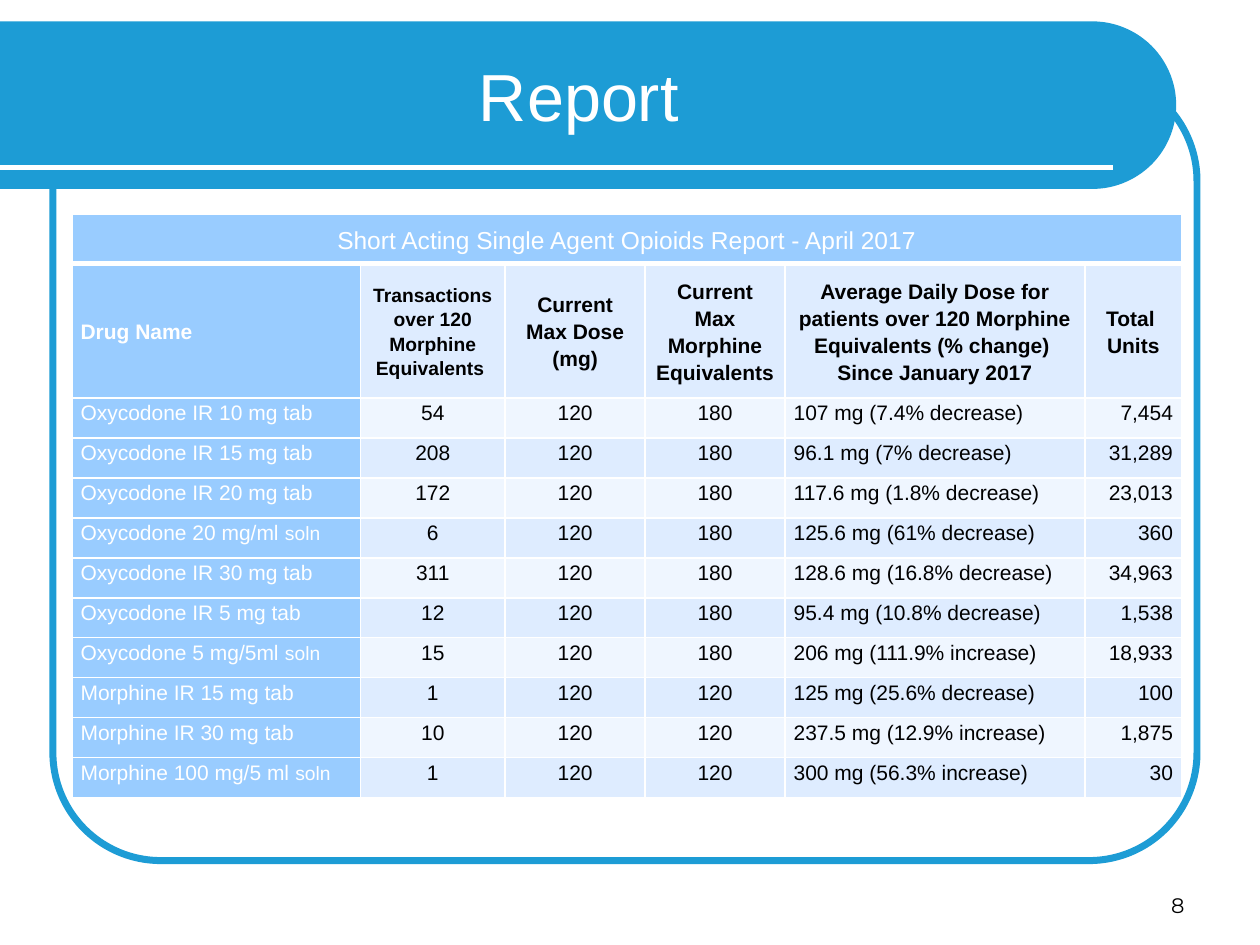
from math import cos, pi, sin

from lxml.etree import SubElement
from pptx import Presentation
from pptx.dml.color import RGBColor
from pptx.enum.shapes import MSO_CONNECTOR, MSO_SHAPE
from pptx.enum.text import MSO_ANCHOR, PP_ALIGN
from pptx.oxml.ns import qn
from pptx.util import Inches, Pt

THEME = {
    "blue": RGBColor.from_string("1D9CD5"),
    "head": RGBColor.from_string("99CCFF"),
    "bands": [RGBColor.from_string("DEECFF"), RGBColor.from_string("EFF6FF")],
    "white": RGBColor.from_string("FFFFFF"),
    "black": RGBColor.from_string("000000"),
    "font": "Arial",
    "number_font": "Montserrat",
    "title": Pt(38),
    "caption": Pt(14),
    "body": Pt(12),
    "small": Pt(11),
}
LEFT, CENTER, RIGHT = PP_ALIGN.LEFT, PP_ALIGN.CENTER, PP_ALIGN.RIGHT


def write(tf, text, align, spacing=1.0, **font):
    tf.text = text
    tf.word_wrap = True
    for p in tf.paragraphs:
        p.alignment = align
        p.line_spacing = spacing
        for r in p.runs:
            for name, value in ({"name": THEME["font"], "bold": False} | font).items():
                if name == "color":
                    r.font.color.rgb = value
                else:
                    setattr(r.font, name, value)


def add_borders(cell, bottom):
    tcPr = cell._tc.get_or_add_tcPr()
    for side, width in {"lnL": 1, "lnR": 1, "lnT": 1, "lnB": bottom}.items():
        ln = SubElement(tcPr, qn(f"a:{side}"), w=str(Pt(width)))
        SubElement(SubElement(ln, qn("a:solidFill")), qn("a:srgbClr"), val=str(THEME["white"]))


prs = Presentation()
prs.slide_width, prs.slide_height = Inches(10), Inches(7.5)
s = prs.slides.add_slide(prs.slide_layouts[6])

frame = s.shapes.add_shape(MSO_SHAPE.ROUNDED_RECTANGLE, Inches(0.42), Inches(0.58), Inches(9.08), Inches(6.25))
frame.adjustments[0] = 0.137
frame.shadow.inherit = False
frame.fill.background()
frame.line.color.rgb = THEME["blue"]
frame.line.width = Pt(4)

radius, center_x, center_y = 0.665, 8.67, 0.835
arc = [
    (Inches(center_x + radius * sin(pi * i / 60)), Inches(center_y - radius * cos(pi * i / 60)))
    for i in range(61)
]
builder = s.shapes.build_freeform(0, Inches(0.17))
builder.add_line_segments(arc + [(0, Inches(1.5))], close=True)
banner = builder.convert_to_shape()
banner.shadow.inherit = False
banner.fill.solid()
banner.fill.fore_color.rgb = THEME["blue"]
banner.line.fill.background()

rule = s.shapes.add_connector(MSO_CONNECTOR.STRAIGHT, 0, Inches(1.33), Inches(8.83), Inches(1.33))
rule.line.color.rgb = THEME["white"]
rule.line.width = Pt(3)
SubElement(rule._element.spPr, qn("a:effectLst"))

labels = [
    ((7.17, 6.83, 2.33, 0.5), "8", RIGHT, MSO_ANCHOR.BOTTOM,
     {"size": THEME["body"], "color": THEME["black"], "name": THEME["number_font"]}),
    ((0.21, 0.25, 8.77, 1), "Report", CENTER, MSO_ANCHOR.MIDDLE,
     {"size": THEME["title"], "color": THEME["white"]}),
]
for box, text, align, anchor, font in labels:
    tf = s.shapes.add_textbox(*map(Inches, box)).text_frame
    write(tf, text, align, **font)
    tf.vertical_anchor = anchor

caption = "Short Acting Single Agent Opioids Report - April 2017"
headers = [
    "Drug Name",
    "Transactions over 120 Morphine Equivalents ",
    "Current Max Dose (mg)",
    "Current Max Morphine Equivalents",
    "Average Daily Dose for patients over 120 Morphine Equivalents (% change) \vSince January 2017",
    "Total \nUnits",
]
drugs = [
    ("Oxycodone IR 10 mg tab", "54", "120", "180", "107 mg (7.4% decrease)", "7,454"),
    ("Oxycodone IR 15 mg tab", "208", "120", "180", "96.1 mg (7% decrease)", "31,289"),
    ("Oxycodone IR 20 mg tab", "172", "120", "180", "117.6 mg (1.8% decrease)", "23,013"),
    ("Oxycodone 20 mg/ml soln", "6", "120", "180", "125.6 mg (61% decrease)", "360"),
    ("Oxycodone IR 30 mg tab", "311", "120", "180", "128.6 mg (16.8% decrease)", "34,963"),
    ("Oxycodone IR 5 mg tab", "12", "120", "180", "95.4 mg (10.8% decrease)", "1,538"),
    ("Oxycodone 5 mg/5ml soln", "15", "120", "180", "206 mg (111.9% increase)", "18,933"),
    ("Morphine IR 15 mg tab", "1", "120", "120", "125 mg (25.6% decrease)", "100"),
    ("Morphine IR 30 mg tab", "10", "120", "120", "237.5 mg (12.9% increase)", "1,875"),
    ("Morphine 100 mg/5 ml soln", "1", "120", "120", "300 mg (56.3% increase)", "30"),
]
rows = [[caption] + [""] * 5, headers, *drugs]
widths = [2.29, 1.15, 1.11, 1.11, 2.38, 0.77]
top_heights, table_height = [0.39, 1.07], 4.63
heights = top_heights + [(table_height - sum(top_heights)) / len(drugs)] * len(drugs)
aligns = [LEFT, CENTER, CENTER, CENTER, LEFT, RIGHT]

table = s.shapes.add_table(
    len(rows), len(widths), Inches(0.57), Inches(1.7), Inches(sum(widths)), Inches(table_height)
).table
table.first_row = table.horz_banding = False
for column, width in zip(table.columns, widths):
    column.width = Inches(width)
for row, height in zip(table.rows, heights):
    row.height = Inches(height)
table.cell(0, 0).merge(table.cell(0, len(widths) - 1))

cell_format = {"margin_left": Inches(0.07), "margin_right": Inches(0.07), "margin_top": 0, "margin_bottom": 0}
for i, row in enumerate(rows):
    for j, text in enumerate(row):
        cell = table.cell(i, j)
        accent = i == 0 or j == 0
        anchor = MSO_ANCHOR.MIDDLE if i < 2 else MSO_ANCHOR.TOP
        for name, value in (cell_format | {"vertical_anchor": anchor}).items():
            setattr(cell, name, value)
        add_borders(cell, 3 if i == 0 else 1)
        cell.fill.solid()
        cell.fill.fore_color.rgb = THEME["head"] if accent else THEME["bands"][(i + 1) % 2]
        size = THEME["caption"] if i == 0 else THEME["small"] if (i, j) == (1, 1) else THEME["body"]
        align = CENTER if i == 0 or (i == 1 and j > 0) else aligns[j]
        color = THEME["white"] if accent else THEME["black"]
        tf = cell.text_frame
        write(tf, text.removesuffix("soln"), align, 1.15, size=size, color=color, bold=i == 1)
        if text.endswith("soln"):
            r = tf.paragraphs[0].add_run()
            r.text = "soln"
            for name, value in {"name": THEME["font"], "size": THEME["small"], "bold": False}.items():
                setattr(r.font, name, value)
            r.font.color.rgb = color

prs.save("out.pptx")
